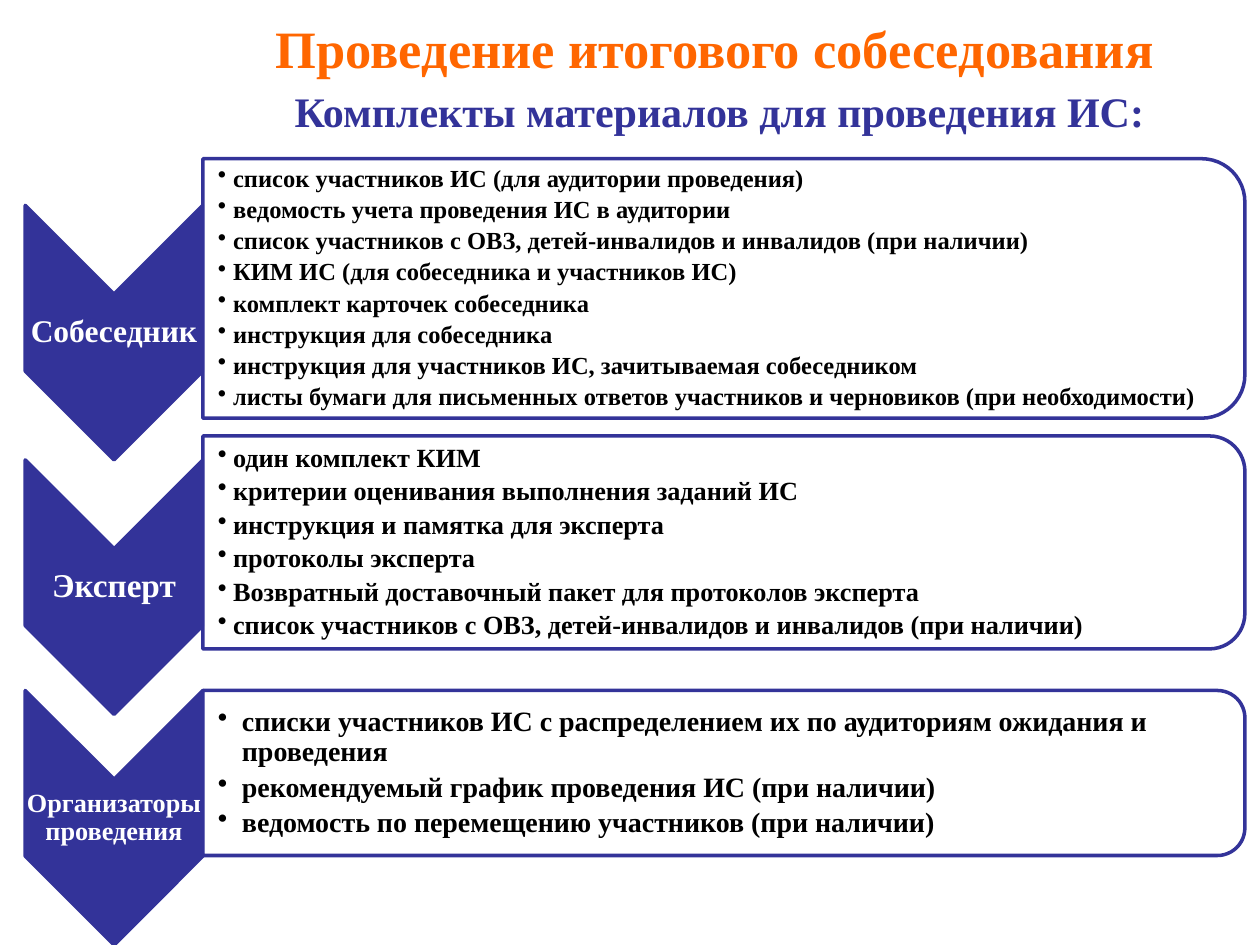
from lxml import etree
from pptx import Presentation
from pptx.dml.color import RGBColor
from pptx.enum import shapes, text
from pptx.oxml.ns import qn
from pptx.util import Inches, Pt

FONT = "Times New Roman"
NAVY, ORANGE, WHITE, BLACK = "333399", "FF6600", "FFFFFF", "000000"
CORNER_INSET = 0.0488  # share of a panel's height taken by its rounded corners

CHEVRON_LEFT, CHEVRON_WIDTH, CHEVRON_HEIGHT = 0.2, 1.41, 2.02
PANEL_LEFT, PANEL_WIDTH = 1.61, 8.27

SECTIONS = [
    {
        "label": "Собеседник", "label_size": 18, "chevron_top": 1.63,
        "panel_top": 1.26, "panel_height": 2.06, "size": 14, "indent": 0.12,
        "items": [
            "список участников ИС (для аудитории проведения)",
            "ведомость учета проведения ИС в аудитории",
            "список участников с ОВЗ, детей-инвалидов и инвалидов (при наличии)",
            "КИМ ИС (для собеседника и участников ИС)",
            "комплект карточек собеседника",
            "инструкция для собеседника",
            "инструкция для участников ИС, зачитываемая собеседником",
            "листы бумаги для письменных ответов участников и черновиков (при необходимости)",
        ],
    },
    {
        "label": "Эксперт", "label_size": 19, "chevron_top": 3.65,
        "panel_top": 3.46, "panel_height": 1.69, "size": 15, "indent": 0.12,
        "items": [
            "один комплект КИМ",
            "критерии оценивания выполнения заданий ИС",
            "инструкция и памятка для эксперта",
            "протоколы эксперта",
            "Возвратный доставочный пакет для протоколов эксперта",
            "список участников с ОВЗ, детей-инвалидов и инвалидов (при наличии)",
        ],
    },
    {
        "label": "Организаторы проведения", "label_size": 15, "chevron_top": 5.48,
        "panel_top": 5.48, "panel_height": 1.31, "size": 16, "indent": 0.19,
        "items": [
            "списки участников ИС с распределением их по аудиториям ожидания и проведения",
            "рекомендуемый график проведения ИС (при наличии)",
            "ведомость по перемещению участников (при наличии)",
        ],
    },
]


def color(value):
    return RGBColor.from_string(value)


def set_attributes(target, values):
    for name, value in values.items():
        setattr(target, name, value)


def write(paragraph, words, size, font_color, **layout):
    paragraph.text = words
    set_attributes(paragraph, layout)
    set_attributes(paragraph.font, {"name": FONT, "size": Pt(size), "bold": True})
    paragraph.font.color.rgb = color(font_color)


def add_bullet(paragraph, indent):
    properties = paragraph._p.get_or_add_pPr()
    properties.set("marL", str(Inches(indent)))
    properties.set("indent", str(-Inches(indent)))
    etree.SubElement(properties, qn("a:buChar")).set("char", "•")


def add_turned_shape(parent, kind, left, top, width, height, fill):
    """Place a preset turned by 90° so that it covers the given box."""
    middle_x, middle_y = left + width / 2, top + height / 2
    shape = parent.add_shape(kind, Inches(middle_x - height / 2), Inches(middle_y - width / 2),
                             Inches(height), Inches(width))
    shape.rotation = 90
    shape.shadow.inherit = False
    shape.fill.solid()
    shape.fill.fore_color.rgb = color(fill)
    shape.line.color.rgb = color(NAVY)
    shape.line.width = Pt(2)
    return shape


def add_text_frame(parent, left, top, width, height, left_margin=0.01):
    box = parent.add_textbox(Inches(left), Inches(top), Inches(width), Inches(height))
    edge = Inches(0.01)
    set_attributes(box.text_frame, {
        "word_wrap": True, "vertical_anchor": text.MSO_ANCHOR.MIDDLE,
        "margin_left": Inches(left_margin), "margin_right": edge,
        "margin_top": edge, "margin_bottom": edge,
    })
    return box.text_frame


def add_chevron(parent, left, top, width, height, label, size):
    add_turned_shape(parent, shapes.MSO_SHAPE.CHEVRON, left, top, width, height, NAVY)
    # The label fills the part between the notch and the tip
    frame = add_text_frame(parent, left, top + width / 2, width, height - width)
    write(frame.paragraphs[0], label, size, WHITE,
          alignment=text.PP_ALIGN.CENTER, line_spacing=0.9)


def add_panel(parent, left, top, width, height, items, size, indent):
    panel = add_turned_shape(parent, shapes.MSO_SHAPE.ROUND_2_SAME_RECTANGLE,
                             left, top, width, height, WHITE)
    fill_color = panel.fill._xPr.find(qn("a:solidFill"))[0]
    etree.SubElement(fill_color, qn("a:alpha")).set("val", "90000")

    inset = height * CORNER_INSET
    frame = add_text_frame(parent, left, top + inset, width - inset, height - 2 * inset, 0.12)
    for index, item in enumerate(items):
        paragraph = frame.add_paragraph() if index else frame.paragraphs[0]
        add_bullet(paragraph, indent)
        write(paragraph, item, size, BLACK, level=1, line_spacing=0.9,
              space_after=Pt(round(size * 0.19, 1)))


def add_heading(slide):
    title = slide.shapes.title
    set_attributes(title, {"left": Inches(1.14), "top": Inches(-0.13),
                           "width": Inches(9.07), "height": Inches(1.01)})
    title.text_frame.vertical_anchor = text.MSO_ANCHOR.MIDDLE
    write(title.text_frame.paragraphs[0], "Проведение итогового собеседования", 30, ORANGE,
          alignment=text.PP_ALIGN.CENTER)

    subtitle = slide.shapes.add_textbox(Inches(2.24), Inches(0.63), Inches(7.64), Inches(0.5))
    subtitle.text_frame.word_wrap = True
    write(subtitle.text_frame.paragraphs[0], "Комплекты материалов для проведения ИС:", 24, NAVY)


def add_diagram(slide):
    parent = slide.shapes.add_group_shape().shapes
    for section in SECTIONS:
        add_chevron(parent, CHEVRON_LEFT, section["chevron_top"], CHEVRON_WIDTH, CHEVRON_HEIGHT,
                    section["label"], section["label_size"])
        add_panel(parent, PANEL_LEFT, section["panel_top"], PANEL_WIDTH, section["panel_height"],
                  section["items"], section["size"], section["indent"])


def main():
    presentation = Presentation()
    presentation.slide_width, presentation.slide_height = Inches(10), Inches(7.5)
    slide = presentation.slides.add_slide(presentation.slide_layouts[5])  # Title Only
    add_heading(slide)
    add_diagram(slide)
    presentation.save("out.pptx")


if __name__ == "__main__":
    main()
